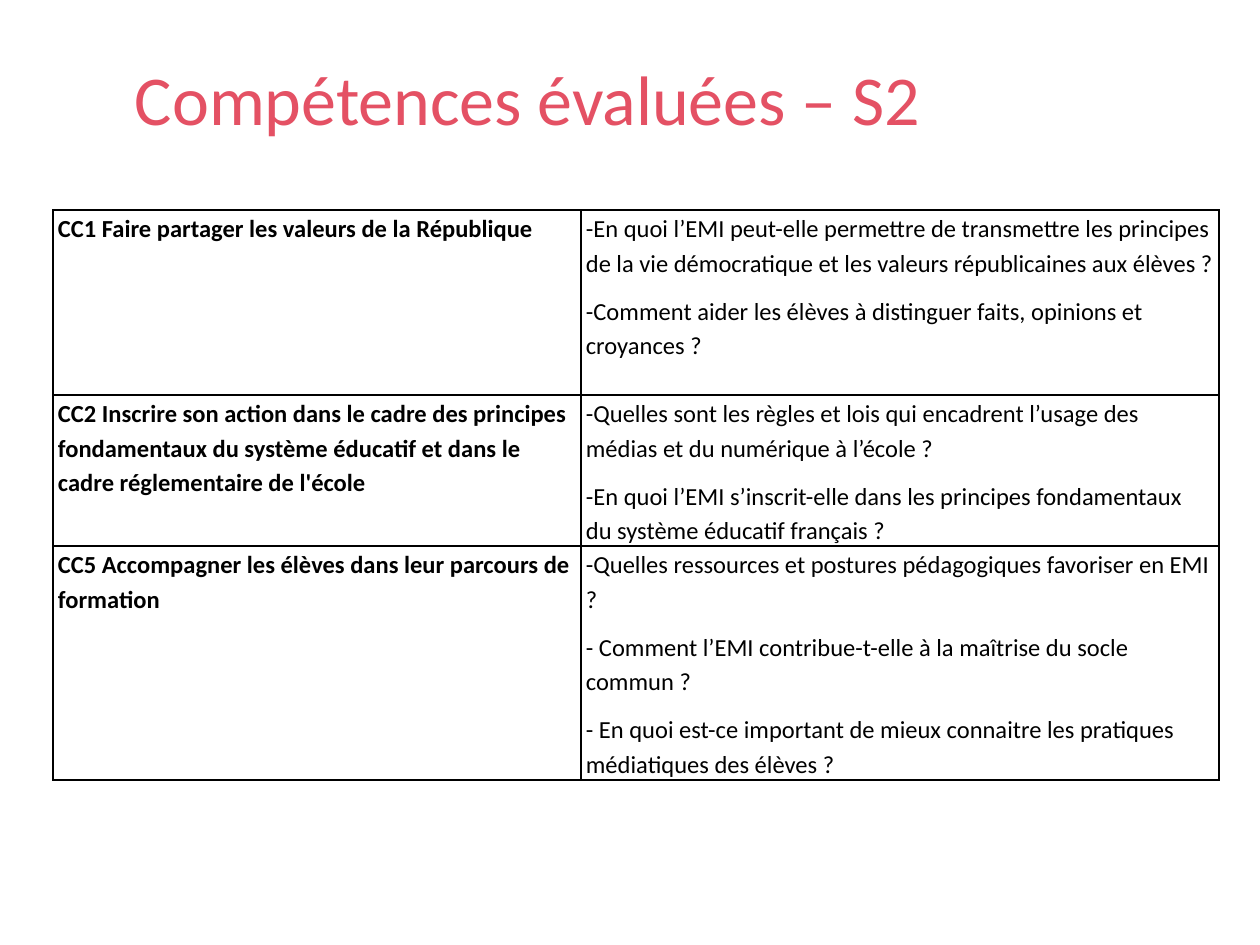
import pptx
import pptx.dml.color
import pptx.enum.text
import pptx.oxml
import pptx.oxml.ns
import pptx.util

EMU_PER_PX = 914400 / 126
FONT = "Calibri"
BLACK, WHITE, CORAL = "000000", "FFFFFF", "E45164"

TITLE = "Compétences évaluées – S2"
COLUMN_WIDTHS = [528, 638]
ROW_HEIGHTS = [185, 151, 234]
SKILLS = [
    ("CC1 Faire partager les valeurs de la République", [
        "-En quoi l’EMI peut-elle permettre de transmettre les principes de la vie "
        "démocratique et les valeurs républicaines aux élèves ?",
        "-Comment aider les élèves à distinguer faits, opinions et croyances ?",
    ]),
    ("CC2 Inscrire son action dans le cadre des principes fondamentaux du système "
     "éducatif et dans le cadre réglementaire de l'école", [
        "-Quelles sont les règles et lois qui encadrent l’usage des médias et du "
        "numérique à l’école ?",
        "-En quoi l’EMI s’inscrit-elle dans les principes fondamentaux du système "
        "éducatif français ?",
    ]),
    ("CC5 Accompagner les élèves dans leur parcours de formation", [
        "-Quelles ressources et postures pédagogiques favoriser en EMI ?",
        "- Comment l’EMI contribue-t-elle à la maîtrise du socle commun ?",
        "- En quoi est-ce important de mieux connaitre les pratiques médiatiques "
        "des élèves ?",
    ]),
]


def px(length):
    return pptx.util.Emu(round(length * EMU_PER_PX))


def color(hex_string):
    return pptx.dml.color.RGBColor.from_string(hex_string)


presentation = pptx.Presentation()
presentation.slide_width = px(1260)
presentation.slide_height = px(945)
slide = presentation.slides.add_slide(presentation.slide_layouts[5])

# Title
title = slide.shapes.title
title.left, title.top, title.width, title.height = px(135), px(55), px(852), px(87)
frame = title.text_frame
frame.text = TITLE
frame.margin_left = frame.margin_right = frame.margin_top = frame.margin_bottom = 0
frame.vertical_anchor = pptx.enum.text.MSO_ANCHOR.TOP
paragraph = frame.paragraphs[0]
paragraph.alignment = pptx.enum.text.PP_ALIGN.LEFT
font = paragraph.runs[0].font
font.name, font.size = FONT, pptx.util.Pt(40)
font.color.rgb = color(CORAL)

# Table of skills and questions
table = slide.shapes.add_table(
    len(SKILLS), len(COLUMN_WIDTHS), px(53), px(210),
    px(sum(COLUMN_WIDTHS)), px(sum(ROW_HEIGHTS))).table
table.first_row = table.horz_banding = False
for column, width in zip(table.columns, COLUMN_WIDTHS):
    column.width = px(width)

for row, height, (skill, questions) in zip(table.rows, ROW_HEIGHTS, SKILLS):
    row.height = px(height)
    for cell, lines, bold in zip(row.cells, ([skill], questions), (True, False)):
        cell.margin_left = cell.margin_right = px(5)
        cell.margin_top = cell.margin_bottom = 0
        cell.text_frame.text = "\n".join(lines)
        for paragraph in cell.text_frame.paragraphs:
            paragraph.line_spacing = 1.15
            paragraph.space_after = pptx.util.Pt(8)
            font = paragraph.runs[0].font
            font.name, font.size, font.bold = FONT, pptx.util.Pt(14), bold
            font.color.rgb = color(BLACK)

        # Borders must come before the fill in the cell properties
        properties = cell._tc.get_or_add_tcPr()
        for side in ("lnL", "lnR", "lnT", "lnB"):
            properties.append(pptx.oxml.parse_xml(
                f'<a:{side} {pptx.oxml.ns.nsdecls("a")} w="{pptx.util.Pt(1)}">'
                f'<a:solidFill><a:srgbClr val="{BLACK}"/></a:solidFill></a:{side}>'))
        cell.fill.solid()
        cell.fill.fore_color.rgb = color(WHITE)

presentation.save("out.pptx")
